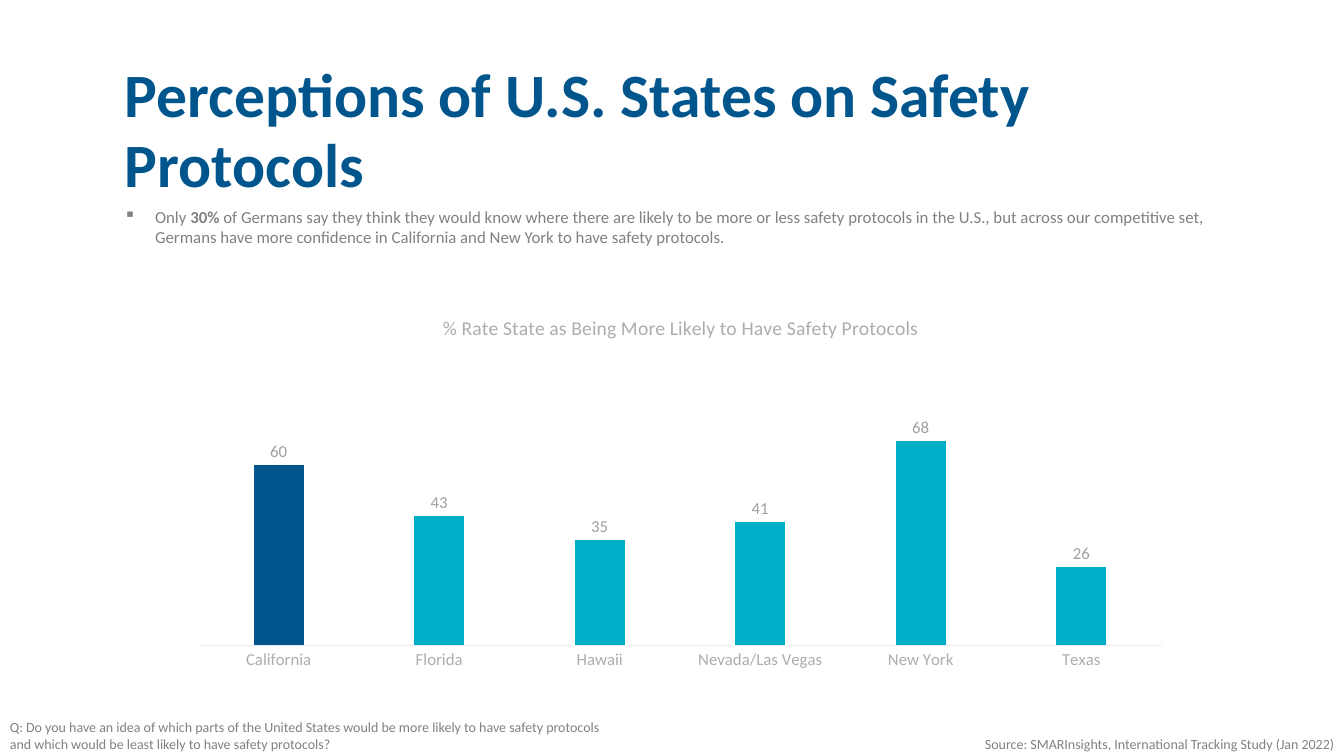
from lxml import etree
from pptx import Presentation
from pptx.chart.data import CategoryChartData
from pptx.dml.color import RGBColor
from pptx.enum import chart as charts, text as texts
from pptx.oxml import parse_xml
from pptx.oxml.ns import nsdecls, qn
from pptx.util import Inches, Pt

NAVY = RGBColor(0x00, 0x55, 0x8C)
TEAL = RGBColor(0x00, 0xAE, 0xC7)
GRAY = RGBColor(0x80, 0x81, 0x80)
LABEL_GRAY = RGBColor(0xA0, 0xA0, 0xA0)
AXIS_GRAY = RGBColor(0xAC, 0xAD, 0xAC)
LINE_GRAY = RGBColor(0xEC, 0xEC, 0xEC)
WHITE = RGBColor(0xFF, 0xFF, 0xFF)
FONT = "Calibri"

STATE_RATINGS = {"California": 60, "Florida": 43, "Hawaii": 35,
                 "Nevada/Las Vegas": 41, "New York": 68, "Texas": 26}


def style_font(font, size, color, bold=False):
    font.name = FONT
    font.size = Pt(size)
    font.bold = bold
    font.color.rgb = color


def add_text(page, place, spans, size=10, color=GRAY, bold=False, wrap=True,
             align=None, line_spacing=None, bullet=None, indent=0.31):
    """Add a one-paragraph text box; spans is a string or (text, bold) pairs."""
    box = page.shapes.add_textbox(*map(Inches, place))
    frame = box.text_frame
    frame.word_wrap = wrap
    para = frame.paragraphs[0]
    if align is not None:
        para.alignment = align
    if line_spacing:
        para.line_spacing = Pt(line_spacing)
    if bullet:
        properties = para._p.get_or_add_pPr()
        properties.set("marL", str(Inches(indent)))
        properties.set("indent", str(-Inches(indent)))
        etree.SubElement(properties, qn("a:buChar")).set("char", bullet)
    if isinstance(spans, str):
        spans = [(spans, bold)]
    for words, is_bold in spans:
        for number, line in enumerate(words.split("\n")):
            if number:
                para.add_line_break()
            span = para.add_run()
            span.text = line
            style_font(span.font, size, color, is_bold)
    return box


def manual_layout(inner=False, **fractions):
    """Layout in fractions of the chart area, keyed x, y, w and h."""
    target = '<c:layoutTarget val="inner"/>' if inner else ""
    modes = '<c:xMode val="edge"/><c:yMode val="edge"/>'
    sizes = "".join(f'<c:{key} val="{value}"/>' for key, value in fractions.items())
    return parse_xml(f'<c:layout {nsdecls("c")}><c:manualLayout>{target}{modes}{sizes}'
                     "</c:manualLayout></c:layout>")


def place_part(part, layout, before):
    """Set the layout of a chart part, ahead of the first tag listed in before."""
    for old in part.findall(qn("c:layout")):
        part.remove(old)
    following = next((child for child in part if child.tag in map(qn, before)), None)
    if following is None:
        part.append(layout)
    else:
        following.addprevious(layout)


def add_heading(page, place):
    add_text(page, place, "Perceptions of U.S. States on Safety Protocols",
             size=44, color=NAVY, bold=True, line_spacing=50)


def add_finding(page, place):
    add_text(page, place, [
        ("Only ", False), ("30% ", True),
        ("of Germans say they think they would know where there are likely to be more "
         "or less safety protocols in the U.S., but across our competitive set, Germans "
         "have more confidence in California and New York to have safety protocols.", False),
    ], size=12, bullet="▪")


def add_ratings_chart(page, place):
    data = CategoryChartData(number_format="0")
    data.categories = list(STATE_RATINGS)
    data.add_series("Series 1", list(STATE_RATINGS.values()))
    chart = page.shapes.add_chart(charts.XL_CHART_TYPE.COLUMN_CLUSTERED,
                                  *map(Inches, place), data).chart
    style_font(chart.font, 10, GRAY)
    chart.has_legend = False

    # Title
    chart.has_title = True
    title = chart.chart_title
    para = title.text_frame.paragraphs[0]
    span = para.add_run()
    span.text = "% Rate State as Being More Likely to Have Safety Protocols"
    style_font(span.font, 14, AXIS_GRAY)
    title.include_in_layout = False
    place_part(title._element, manual_layout(x=0.26, y=0.05),
               ["c:overlay", "c:spPr", "c:txPr"])

    # Axes
    for axis in (chart.category_axis, chart.value_axis):
        axis.major_tick_mark = axis.minor_tick_mark = charts.XL_TICK_MARK.NONE
        axis.has_major_gridlines = False
        style_font(axis.tick_labels.font, 12, AXIS_GRAY)
    chart.category_axis.format.line.color.rgb = LINE_GRAY
    chart.category_axis.format.line.width = Pt(0.75)
    values = chart.value_axis
    values.minimum_scale, values.maximum_scale, values.major_unit = 0, 100, 25
    values.tick_label_position = charts.XL_TICK_LABEL_POSITION.NONE
    values.format.line.fill.background()

    # Columns and their labels
    plot = chart.plots[0]
    plot.gap_width, plot.overlap = 219, -27
    plot.vary_by_categories = False
    series = plot.series[0]
    for target, color in ((series, TEAL), (series.points[0], NAVY)):
        target.format.fill.solid()
        target.format.fill.fore_color.rgb = color
    labels = series.data_labels
    labels.show_value = True
    labels.number_format, labels.number_format_is_linked = "0", False
    labels.position = charts.XL_LABEL_POSITION.OUTSIDE_END
    style_font(labels.font, 12, LABEL_GRAY)
    place_part(chart._chartSpace.chart.plotArea,
               manual_layout(inner=True, x=0.02, y=0.14, w=0.96, h=0.78), ["c:barChart"])


def add_footer(page, question_place, source_place):
    add_text(page, question_place,
             "Q: Do you have an idea of which parts of the United States would be more "
             "likely to have safety protocols\n"
             "and which would be least likely to have safety protocols?", wrap=False)
    add_text(page, source_place,
             "Source: SMARInsights, International Tracking Study (Jan 2022)",
             align=texts.PP_ALIGN.RIGHT)


def main():
    deck = Presentation()
    deck.slide_width, deck.slide_height = Inches(13.33), Inches(7.5)
    page = deck.slides.add_slide(deck.slide_layouts[6])
    page.background.fill.solid()
    page.background.fill.fore_color.rgb = WHITE
    add_heading(page, (1.14, 0.54, 11.06, 1.97))
    add_footer(page, (0, 7.08, 7.1, 0.61), (7.4, 7.25, 5.93, 0.27))
    add_finding(page, (1.13, 2, 11.36, 0.71))
    add_ratings_chart(page, (1.77, 2.89, 9.95, 3.82))
    deck.save("out.pptx")


if __name__ == "__main__":
    main()
